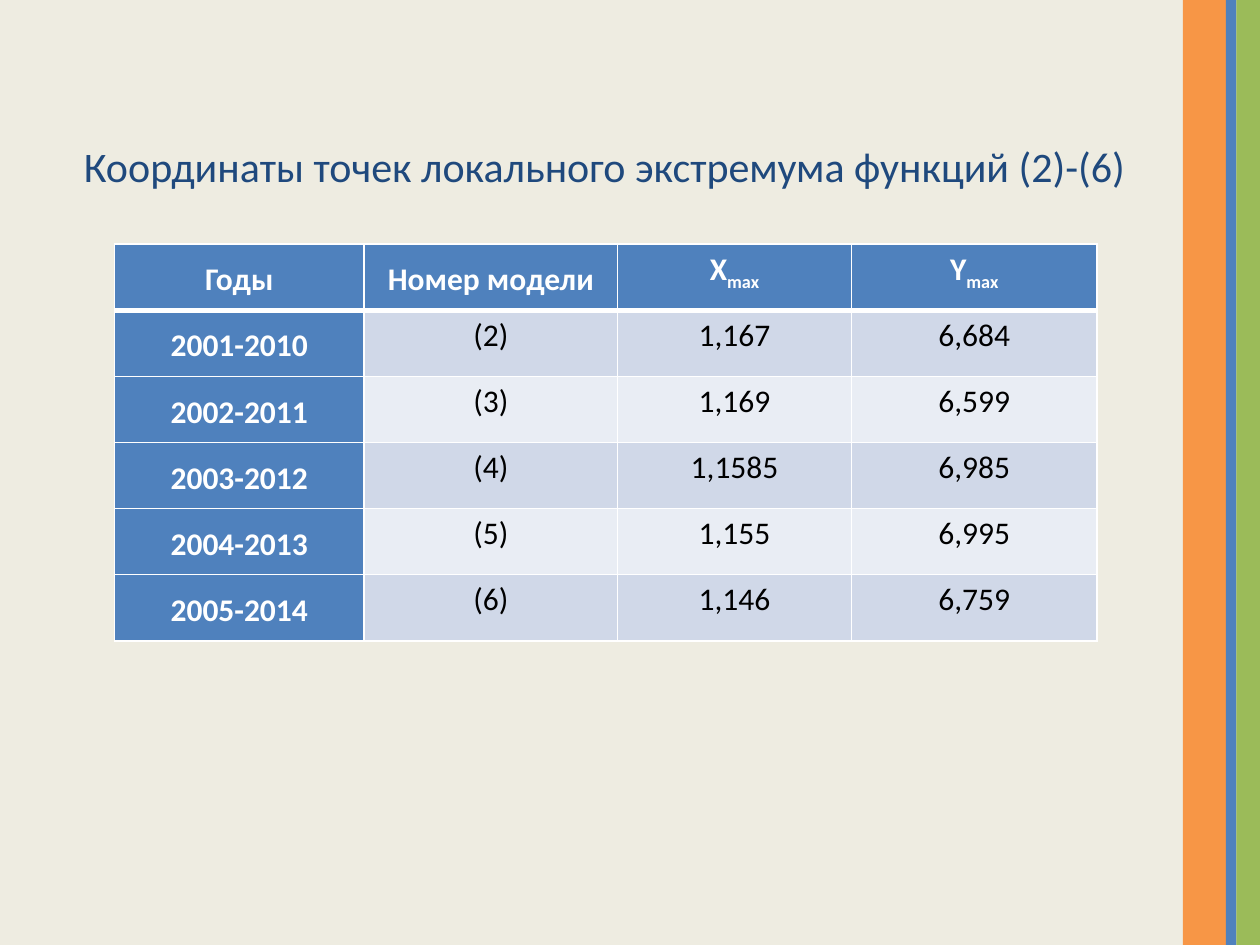
import dataclasses

import lxml.etree
import pptx
import pptx.dml.color
import pptx.enum.shapes
import pptx.enum.text
import pptx.oxml.ns
import pptx.util

Pt = pptx.util.Pt
ANCHOR = pptx.enum.text.MSO_ANCHOR


@dataclasses.dataclass(frozen=True)
class Theme:
    font: str = "Calibri"
    background: str = "EEECE1"
    title: str = "1F497D"
    orange: str = "F79646"
    blue: str = "4F81BD"
    green: str = "9BBB59"
    white: str = "FFFFFF"
    body: str = "000000"
    bands: tuple = ("D0D8E8", "E9EDF4")
    title_size: int = 24
    table_size: int = 18
    thin_border: int = 1
    thick_border: int = 3


def color(value):
    return pptx.dml.color.RGBColor.from_string(value)


def paint(fill, value):
    fill.solid()
    fill.fore_color.rgb = color(value)


def write_text(paragraph, text, *, font, size, ink, bold=False, baseline=0, spacing=1.0):
    paragraph.alignment = pptx.enum.text.PP_ALIGN.CENTER
    paragraph.line_spacing = spacing
    run = paragraph.add_run()
    run.text = text
    run.font.name = font
    run.font.size = Pt(size)
    run.font.bold = bold
    run.font.color.rgb = color(ink)
    if baseline:
        run.font._element.set("baseline", str(baseline * 1000))


class SlideBuilder:
    """Draws styled elements on the current slide."""

    def __init__(self, slide, theme):
        self.slide = slide
        self.theme = theme
        paint(slide.background.fill, theme.background)

    def add_bar(self, left, width, height, fill):
        shape = self.slide.shapes.add_shape(
            pptx.enum.shapes.MSO_SHAPE.RECTANGLE, Pt(left), 0, Pt(width), Pt(height))
        shape.shadow.inherit = False
        paint(shape.fill, fill)
        shape.line.fill.background()

    def add_title(self, text, left, top, width, height):
        frame = self.slide.shapes.add_textbox(Pt(left), Pt(top), Pt(width), Pt(height)).text_frame
        frame.word_wrap = True
        frame.vertical_anchor = ANCHOR.MIDDLE
        write_text(frame.paragraphs[0], text, font=self.theme.font,
                   size=self.theme.title_size, ink=self.theme.title)

    def add_border(self, cell, side, width):
        tag = pptx.oxml.ns.qn
        properties = cell._tc.get_or_add_tcPr()
        line = lxml.etree.SubElement(properties, tag(f"a:ln{side}"), w=str(Pt(width)))
        fill = lxml.etree.SubElement(line, tag("a:solidFill"))
        lxml.etree.SubElement(fill, tag("a:srgbClr"), val=self.theme.white)

    def format_cell(self, cell, parts, row, column):
        theme = self.theme
        heading = row == 0 or column == 0
        label = column == 0 or (row == 0 and column == 1)
        cell.margin_left = cell.margin_right = Pt(5)
        cell.margin_top = cell.margin_bottom = 0
        cell.vertical_anchor = ANCHOR.MIDDLE if label else ANCHOR.TOP
        for side in "LRTB":
            thick = (row, side) in ((0, "B"), (1, "T"))
            self.add_border(cell, side, theme.thick_border if thick else theme.thin_border)
        paint(cell.fill, theme.blue if heading else theme.bands[(row - 1) % 2])
        for index, part in enumerate(parts):
            write_text(cell.text_frame.paragraphs[0], part, font=theme.font,
                       size=theme.table_size, ink=theme.white if heading else theme.body,
                       bold=heading, baseline=-25 if index else 0, spacing=1.15)

    def add_table(self, rows, left, top, widths, row_height):
        table = self.slide.shapes.add_table(
            len(rows), len(widths), Pt(left), Pt(top),
            Pt(sum(widths)), Pt(row_height * len(rows))).table
        for column, width in zip(table.columns, widths):
            column.width = Pt(width)
        for row, values in enumerate(rows):
            table.rows[row].height = Pt(row_height)
            for column, value in enumerate(values):
                parts = (value,) if isinstance(value, str) else value
                self.format_cell(table.cell(row, column), parts, row, column)


def main():
    presentation = pptx.Presentation()
    presentation.slide_width = Pt(720)
    presentation.slide_height = Pt(540)
    theme = Theme()
    slide = presentation.slides.add_slide(presentation.slide_layouts[6])
    builder = SlideBuilder(slide, theme)

    left = 676
    for width, fill in ((24.5, theme.orange), (6, theme.blue), (13.5, theme.green)):
        builder.add_bar(left, width, 540, fill)
        left += width

    builder.add_title("Координаты точек локального экстремума функций (2)-(6)",
                      36.5, 55, 618, 79)
    rows = (
        ("Годы", "Номер модели", ("X", "max"), ("Y", "max")),
        ("2001-2010", "(2)", "1,167", "6,684"),
        ("2002-2011", "(3)", "1,169", "6,599"),
        ("2003-2012", "(4)", "1,1585", "6,985"),
        ("2004-2013", "(5)", "1,155", "6,995"),
        ("2005-2014", "(6)", "1,146", "6,759"),
    )
    builder.add_table(rows, 65.5, 139.5, (142.5, 145, 133.5, 140.5), 37.8)
    presentation.save("out.pptx")


if __name__ == "__main__":
    main()
